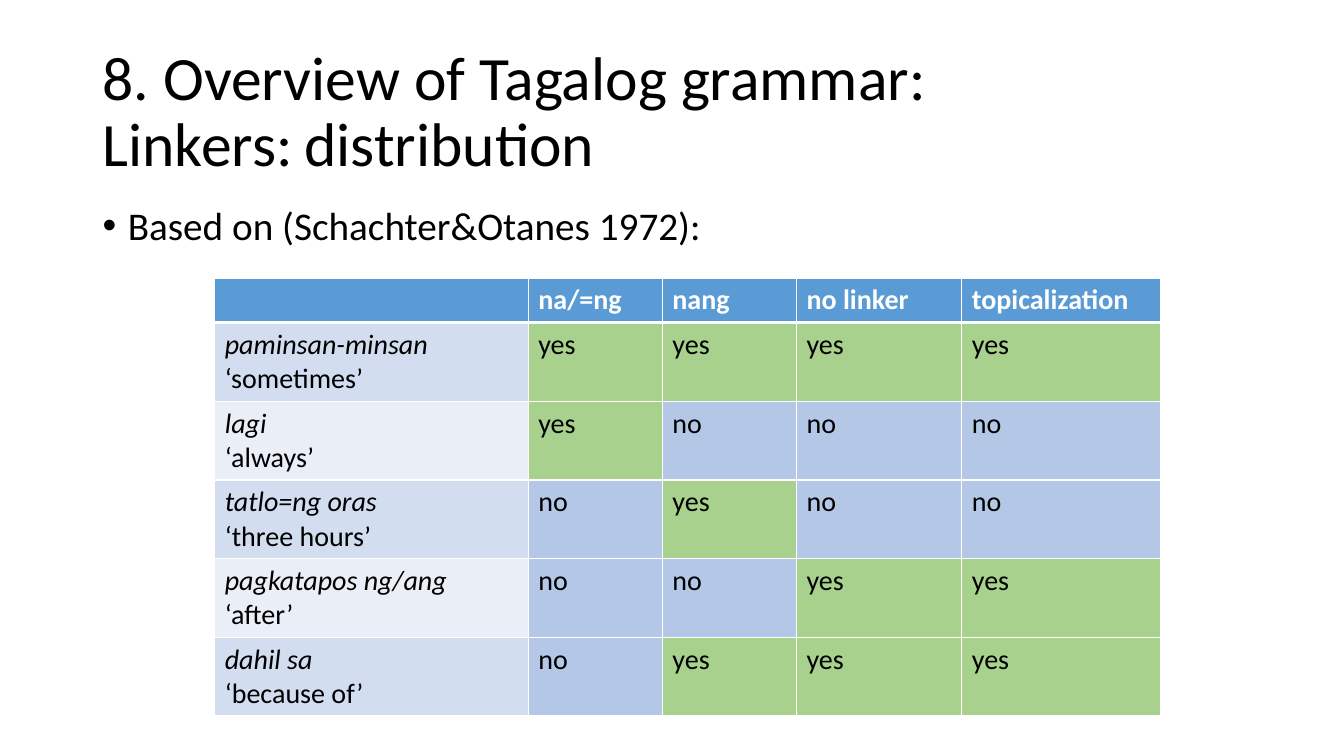
from lxml.etree import SubElement
from pptx import Presentation
from pptx.dml.color import RGBColor
from pptx.enum.text import MSO_ANCHOR
from pptx.oxml.ns import qn
from pptx.util import Inches, Pt

TITLE = ["8. Overview of Tagalog grammar:", "Linkers:\tdistribution"]
SOURCE = "Based on (Schachter&Otanes 1972):"
HEADINGS = ["", "na/=ng", "nang", "no linker", "topicalization"]
ADVERBIALS = [
    ("paminsan-minsan", "‘sometimes’", ["yes", "yes", "yes", "yes"]),
    ("lagi", "‘always’", ["yes", "no", "no", "no"]),
    ("tatlo=ng oras", "‘three hours’", ["no", "yes", "no", "no"]),
    ("pagkatapos ng/ang", "‘after’", ["no", "no", "yes", "yes"]),
    ("dahil sa", "‘because of’", ["no", "yes", "yes", "yes"]),
]
COLUMN_WIDTHS = [3.11, 1.33, 1.33, 1.64, 1.97]
HEADING_HEIGHT, ADVERBIAL_HEIGHT = 0.44, 0.78

BLACK = RGBColor(0x00, 0x00, 0x00)
WHITE = RGBColor(0xFF, 0xFF, 0xFF)
HEADING_BLUE = RGBColor(0x5B, 0x9B, 0xD5)
BANDS = [RGBColor(0xD2, 0xDE, 0xEF), RGBColor(0xEA, 0xEF, 0xF7)]
ANSWER_FILLS = {"yes": RGBColor(0xA9, 0xD1, 0x8E), "no": RGBColor(0xB4, 0xC7, 0xE7)}


def write(paragraph, text, size=20, color=BLACK, bold=False, italic=False):
    run = paragraph.add_run()
    run.text = text
    font = run.font
    font.name, font.size, font.bold, font.italic = "Calibri", Pt(size), bold, italic
    font.color.rgb = color


def add_text_frame(slide, left, top, width, height, anchor):
    frame = slide.shapes.add_textbox(
        Inches(left), Inches(top), Inches(width), Inches(height)).text_frame
    frame.word_wrap = True
    frame.vertical_anchor = anchor
    frame.paragraphs[0].line_spacing = 0.9
    return frame


def style_cell(cell, fill, top=1, bottom=1):
    properties = cell._tc.get_or_add_tcPr()
    for side, points in (("L", 1), ("R", 1), ("T", top), ("B", bottom)):
        border = SubElement(properties, qn(f"a:ln{side}"), w=str(Pt(points)))
        SubElement(SubElement(border, qn("a:solidFill")), qn("a:srgbClr"), val=str(WHITE))
    cell.fill.solid()
    cell.fill.fore_color.rgb = fill


def add_title(slide):
    paragraph = add_text_frame(slide, 0.92, 0.4, 11.5, 1.45, MSO_ANCHOR.MIDDLE).paragraphs[0]
    write(paragraph, TITLE[0], size=44)
    paragraph.add_line_break()
    write(paragraph, TITLE[1], size=44)


def add_source(slide):
    paragraph = add_text_frame(slide, 0.92, 2, 11.5, 4.76, MSO_ANCHOR.TOP).paragraphs[0]
    paragraph.space_before = Pt(10)
    properties = paragraph._p.get_or_add_pPr()
    properties.set("marL", str(Inches(0.25)))
    properties.set("indent", str(Inches(-0.25)))
    SubElement(properties, qn("a:buFont"), typeface="Arial")
    SubElement(properties, qn("a:buChar"), char="•")
    write(paragraph, SOURCE, size=28)


def add_distribution(slide):
    height = HEADING_HEIGHT + ADVERBIAL_HEIGHT * len(ADVERBIALS)
    table = slide.shapes.add_table(
        len(ADVERBIALS) + 1, len(HEADINGS), Inches(2.13), Inches(2.76),
        Inches(sum(COLUMN_WIDTHS)), Inches(height)).table
    for column, width in zip(table.columns, COLUMN_WIDTHS):
        column.width = Inches(width)
    table.rows[0].height = Inches(HEADING_HEIGHT)
    for column, heading in enumerate(HEADINGS):
        cell = table.cell(0, column)
        style_cell(cell, HEADING_BLUE, bottom=3)
        if heading:
            write(cell.text_frame.paragraphs[0], heading, color=WHITE, bold=True)

    for row, (phrase, meaning, answers) in enumerate(ADVERBIALS, 1):
        table.rows[row].height = Inches(ADVERBIAL_HEIGHT)
        top = 3 if row == 1 else 1
        label = table.cell(row, 0)
        style_cell(label, BANDS[(row - 1) % 2], top=top)
        write(label.text_frame.paragraphs[0], phrase, italic=True)
        write(label.text_frame.add_paragraph(), meaning)
        for column, answer in enumerate(answers, 1):
            cell = table.cell(row, column)
            style_cell(cell, ANSWER_FILLS[answer], top=top)
            write(cell.text_frame.paragraphs[0], answer)


def main():
    deck = Presentation()
    deck.slide_width, deck.slide_height = Inches(13.33), Inches(7.5)
    slide = deck.slides.add_slide(deck.slide_layouts[6])
    add_distribution(slide)
    add_title(slide)
    add_source(slide)
    deck.save("out.pptx")


if __name__ == "__main__":
    main()
